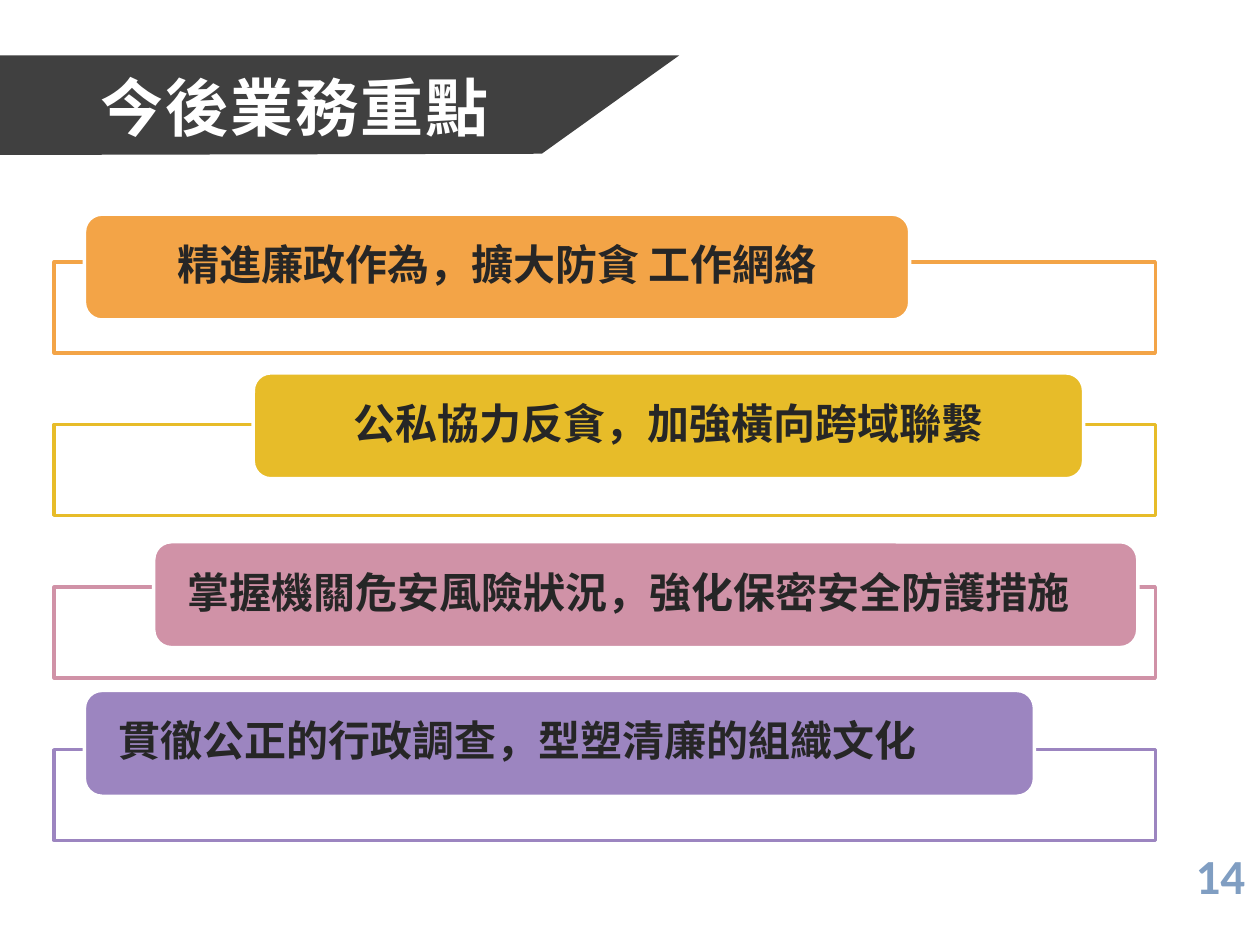
from lxml.etree import SubElement
from pptx import Presentation
from pptx.dml.color import RGBColor
from pptx.enum.shapes import MSO_SHAPE as Kind
from pptx.enum.text import MSO_ANCHOR as Anchor, PP_ALIGN as Align
from pptx.oxml.ns import qn
from pptx.util import Inches, Pt

WHITE = RGBColor(0xFF, 0xFF, 0xFF)
DARK = RGBColor(0x40, 0x40, 0x40)
INK = RGBColor(0x26, 0x26, 0x26)
BLUE = RGBColor(0x80, 0x9E, 0xC2)
ORANGE = RGBColor(0xF3, 0xA4, 0x47)
GOLD = RGBColor(0xE7, 0xBC, 0x29)
PINK = RGBColor(0xD0, 0x92, 0xA7)
PURPLE = RGBColor(0x9C, 0x85, 0xC0)
SANS = "Noto Sans CJK SC"


def write(shape, text, size, color, font=SANS, align=Align.CENTER, pad=0):
    frame = shape.text_frame
    frame.word_wrap = True
    frame.vertical_anchor = Anchor.MIDDLE
    frame.margin_left = frame.margin_right = Inches(pad)
    frame.margin_top = frame.margin_bottom = 0
    para = frame.paragraphs[0]
    para.alignment = align
    run = para.add_run()
    run.text = text
    run.font.name = font
    run.font.size = Pt(size)
    run.font.bold = True
    run.font.color.rgb = color
    props = run.font._element
    SubElement(props, qn("a:ea"), typeface=font)
    return para, props


def block(kind, left, top, width, height, fill, line):
    shape = shapes.add_shape(kind, Inches(left), Inches(top), Inches(width), Inches(height))
    shape.shadow.inherit = False
    shape.fill.solid()
    shape.fill.fore_color.rgb = fill
    shape.line.color.rgb = line
    shape.line.width = Pt(2)
    return shape


deck = Presentation()
deck.slide_width = Inches(10)
deck.slide_height = Inches(7.5)
slide = deck.slides.add_slide(deck.slide_layouts[6])
shapes = slide.shapes

pen = shapes.build_freeform(Inches(-0.12), Inches(1.23), scale=1.0)
points = [(-0.07, 0.44), (5.39, 0.44), (4.3, 1.22)]
pen.add_line_segments([(Inches(x), Inches(y)) for x, y in points], close=True)
banner = pen.convert_to_shape()
banner.shadow.inherit = False
banner.fill.solid()
banner.fill.fore_color.rgb = DARK
banner.line.fill.background()

title = shapes.add_textbox(Inches(-0.24), Inches(0.22), Inches(5.16), Inches(1.25))
para, props = write(title, "今後業務重點", 36, WHITE, pad=0.1)
props.set("spc", "110")

number = shapes.add_textbox(Inches(9.33), Inches(6.71), Inches(0.71), Inches(0.47))
write(number, "14", 28, BLUE, font="Calibri")

rows = [
    ("精進廉政作為，擴大防貪 工作網絡", ORANGE, 0.67, 1.7, 6.55, Align.CENTER),
    ("公私協力反貪，加強橫向跨域聯繫", GOLD, 2.01, 2.96, 6.59, Align.CENTER),
    ("掌握機關危安風險狀況，強化保密安全防護措施", PINK, 1.22, 4.3, 7.81, Align.LEFT),
    ("貫徹公正的行政調查，型塑清廉的組織文化", PURPLE, 0.67, 5.48, 7.54, Align.LEFT),
]
for i, (text, color, left, top, width, align) in enumerate(rows):
    frame = block(Kind.RECTANGLE, 0.43, 2.08 + 1.29 * i, 8.74, 0.72, WHITE, color)
    tone = frame._element.spPr.find(qn("a:solidFill"))[0]
    SubElement(tone, qn("a:alpha"), val="90000")
    bar = block(Kind.ROUNDED_RECTANGLE, left, top, width, 0.84, color, WHITE)
    para, props = write(bar, text, 24, INK, align=align, pad=0.23)
    para.line_spacing = 0.9

deck.save("out.pptx")
